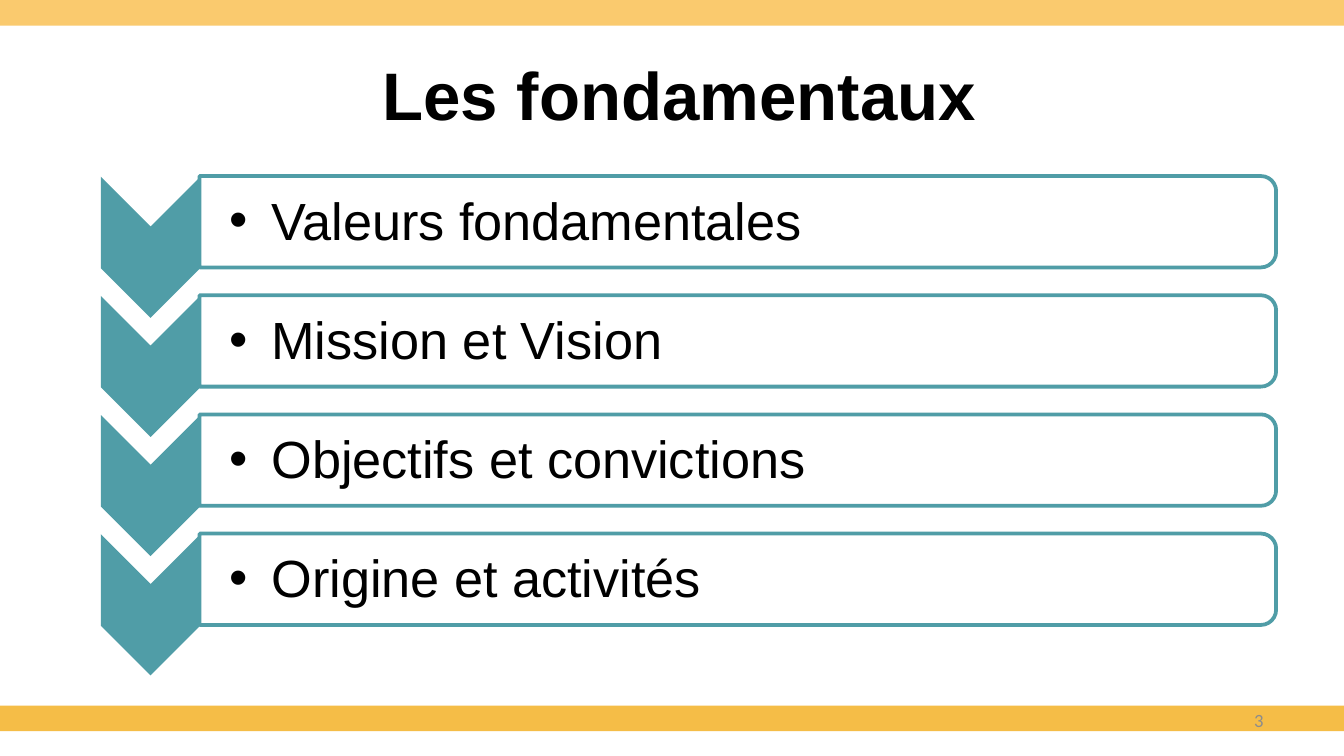
from lxml.etree import SubElement
from pptx import Presentation
from pptx.dml.color import RGBColor
from pptx.enum.shapes import MSO_SHAPE
from pptx.enum.text import MSO_ANCHOR, PP_ALIGN
from pptx.oxml.ns import qn
from pptx.util import Inches, Pt

AMBER = RGBColor(0xF5, 0xBD, 0x47)
LIGHT_AMBER = RGBColor(0xFA, 0xCA, 0x6E)
TEAL = RGBColor(0x50, 0x9D, 0xA7)
WHITE = RGBColor(0xFF, 0xFF, 0xFF)
BLACK = RGBColor(0, 0, 0)
GREY = RGBColor(0x8C, 0x8C, 0x8C)

TOPICS = [
    "Valeurs fondamentales",
    "Mission et Vision",
    "Objectifs et convictions",
    "Origine et activités",
]
FIRST_TOP = 1.35
LAST_TOP = 4.01
ROW_PITCH = (LAST_TOP - FIRST_TOP) / (len(TOPICS) - 1)


def add_filled_shape(slide, kind, left, top, width, height, color):
    shape = slide.shapes.add_shape(
        kind, Inches(left), Inches(top), Inches(width), Inches(height)
    )
    shape.shadow.inherit = False
    shape.fill.solid()
    shape.fill.fore_color.rgb = color
    shape.line.fill.background()
    return shape


def add_turned_shape(slide, kind, center_x, center_y, width, height, color):
    shape = add_filled_shape(
        slide, kind, center_x - width / 2, center_y - height / 2, width, height, color
    )
    shape.rotation = 90
    return shape


def add_text(slide, text, left, top, width, height, size, font_name, color,
             align=PP_ALIGN.LEFT, bold=False):
    box = slide.shapes.add_textbox(
        Inches(left), Inches(top), Inches(width), Inches(height)
    )
    frame = box.text_frame
    frame.word_wrap = True
    frame.vertical_anchor = MSO_ANCHOR.MIDDLE
    paragraph = frame.paragraphs[0]
    paragraph.alignment = align
    run = paragraph.add_run()
    run.text = text
    run.font.size = Pt(size)
    run.font.name = font_name
    run.font.bold = bold
    run.font.color.rgb = color
    return frame


def add_bullet(paragraph, indent):
    properties = paragraph._p.get_or_add_pPr()
    properties.set("marL", str(Inches(indent)))
    properties.set("indent", str(-Inches(indent)))
    SubElement(properties, qn("a:buFont")).set("typeface", "Arial")
    SubElement(properties, qn("a:buChar")).set("char", "•")


def set_opacity(shape, percent):
    color = shape.fill._xPr.find(qn("a:solidFill"))[0]
    SubElement(color, qn("a:alpha")).set("val", str(percent * 1000))


def add_topic(slide, text, top):
    add_turned_shape(slide, MSO_SHAPE.CHEVRON, 1.12, top + 0.49, 1.05, 0.74, TEAL)
    panel = add_turned_shape(
        slide, MSO_SHAPE.ROUND_2_SAME_RECTANGLE, 5.49, top + 0.3, 0.68, 8.01, WHITE
    )
    set_opacity(panel, 90)
    panel.line.color.rgb = TEAL
    panel.line.width = Pt(2)
    frame = add_text(slide, text, 1.49, top, 7.98, 0.62, 28, "Arial", BLACK)
    frame.margin_left = Inches(0.22)
    frame.margin_top = frame.margin_right = frame.margin_bottom = Inches(0.02)
    paragraph = frame.paragraphs[0]
    add_bullet(paragraph, 0.31)
    paragraph.line_spacing = 0.9


def main():
    presentation = Presentation()
    presentation.slide_width = Inches(10)
    presentation.slide_height = Inches(10) * 9 // 16
    slide = presentation.slides.add_slide(presentation.slide_layouts[6])
    for top, color in ((5.25, AMBER), (0, LIGHT_AMBER)):
        add_filled_shape(slide, MSO_SHAPE.RECTANGLE, 0, top, 10, 0.19, color)
    add_text(slide, "Les fondamentaux ", 0.75, 0.23, 8.75, 0.94, 36, "Arial", BLACK,
             PP_ALIGN.CENTER, True)
    add_text(slide, "3", 7.17, 5.21, 2.33, 0.3, 10, "Calibri", GREY, PP_ALIGN.RIGHT)
    for row, topic in enumerate(TOPICS):
        add_topic(slide, topic, FIRST_TOP + row * ROW_PITCH)
    presentation.save("out.pptx")


if __name__ == "__main__":
    main()
